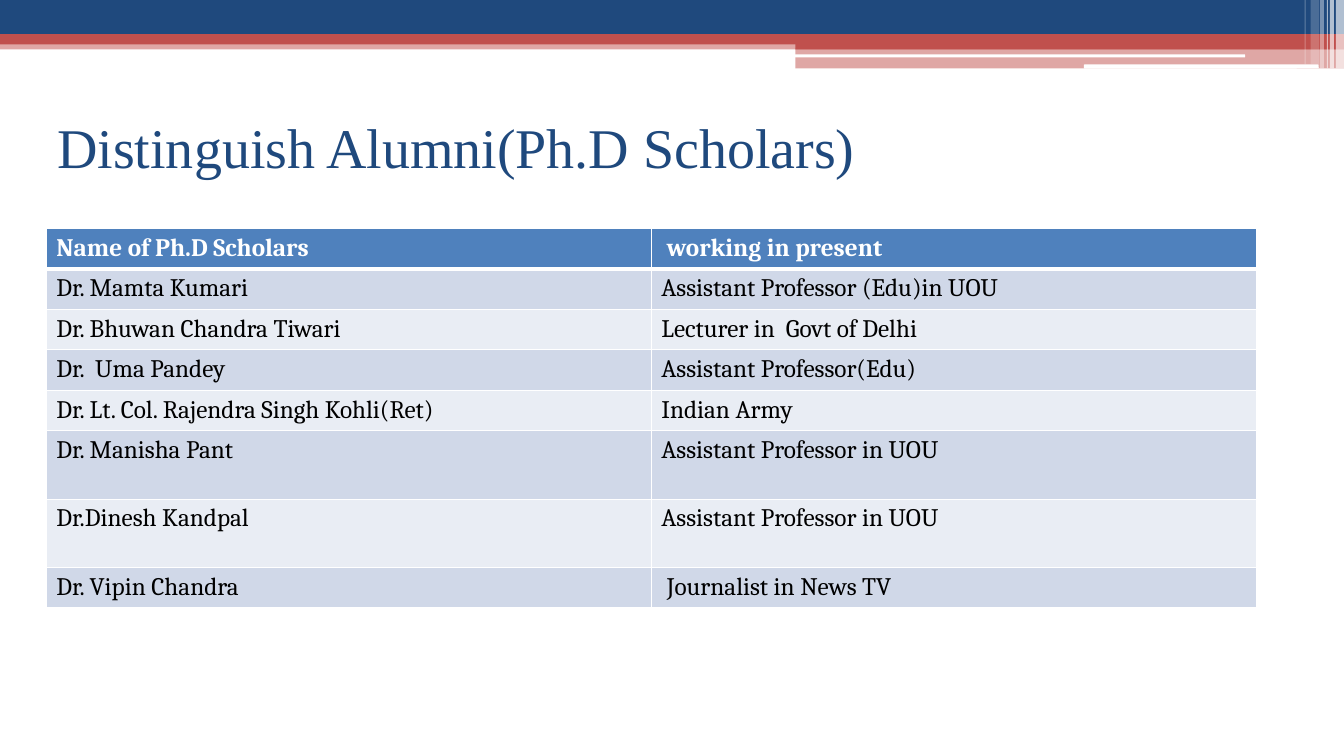
from lxml import etree
from pptx import Presentation
from pptx.dml.color import RGBColor
from pptx.enum.shapes import MSO_SHAPE
from pptx.enum.text import MSO_ANCHOR
from pptx.oxml.ns import qn
from pptx.util import Inches, Pt

RECT = MSO_SHAPE.RECTANGLE
ROUNDED = MSO_SHAPE.ROUNDED_RECTANGLE
MIDDLE = MSO_ANCHOR.MIDDLE

COLORS = {
    "navy": "1F497D",
    "red": "C0504D",
    "white": "FFFFFF",
    "black": "000000",
    "header": "4F81BD",
    "odd_row": "D0D8E8",
    "even_row": "E9EDF4",
}

# Left, top, width, height, colour, opacity in percent
BANDS = [
    (0, 0.4, 13.33, 0.09, "red", 50),
    (0, 0, 13.33, 0.34, "navy", 100),
    (0, 0.34, 13.33, 0.1, "red", 100),
    (7.89, 0.39, 5.44, 0.1, "red", 100),
    (7.89, 0.48, 5.44, 0.2, "red", 50),
]
GAPS = [(7.88, 0.54, 4.47, 0.03), (10.75, 0.64, 2.33, 0.04)]
# Left, width, height, opacity in percent
STRIPES = [
    (13.25, 0.08, 0.68, 65),
    (13.19, 0.04, 0.68, 65),
    (13.16, 0.01, 0.68, 60),
    (13.09, 0.04, 0.68, 40),
    (13, 0.08, 0.64, 20),
    (12.94, 0.01, 0.64, 30),
]

SCHOLARS = [
    ("Name of Ph.D Scholars", " working in present"),
    ("Dr. Mamta Kumari", "Assistant Professor (Edu)in UOU"),
    ("Dr. Bhuwan Chandra Tiwari", "Lecturer in  Govt of Delhi"),
    ("Dr.  Uma Pandey", "Assistant Professor(Edu)"),
    ("Dr. Lt. Col. Rajendra Singh Kohli(Ret)", "Indian Army"),
    ("Dr. Manisha Pant", "Assistant Professor in UOU"),
    ("Dr.Dinesh Kandpal", "Assistant Professor in UOU"),
    ("Dr. Vipin Chandra", " Journalist in News TV"),
]
ROW_HEIGHT = 0.4
TALL_ROWS = {5: 0.68, 6: 0.68}


def rgb(color):
    return RGBColor.from_string(COLORS[color])


def style_font(paragraph, name, size, color, bold=False):
    font = paragraph.font
    font.name, font.size, font.bold = name, Pt(size), bold
    font.color.rgb = rgb(color)


def add_bar(slide, left, top, width, height, color, opacity=100, kind=RECT):
    bar = slide.shapes.add_shape(
        kind, Inches(left), Inches(top), Inches(width), Inches(height))
    bar.shadow.inherit = False
    bar.fill.solid()
    bar.fill.fore_color.rgb = rgb(color)
    bar.line.fill.background()
    if opacity < 100:
        fill_color = bar._element.spPr.find(".//" + qn("a:srgbClr"))
        etree.SubElement(fill_color, qn("a:alpha"), val=str(opacity * 1000))


def add_title(slide, text):
    title = slide.shapes.add_textbox(
        Inches(0.47), Inches(0.86), Inches(12), Inches(1.17))
    frame = title.text_frame
    frame.word_wrap = True
    frame.vertical_anchor = MIDDLE
    frame.text = text
    style_font(frame.paragraphs[0], "Times New Roman", 40, "navy")


def set_borders(cell, **widths):
    properties = cell._tc.get_or_add_tcPr()
    for position, (side, width) in enumerate(widths.items()):
        border = etree.Element(qn("a:ln" + side), w=str(Pt(width)))
        fill = etree.SubElement(border, qn("a:solidFill"))
        etree.SubElement(fill, qn("a:srgbClr"), val=COLORS["white"])
        properties.insert(position, border)


def add_scholar_table(slide):
    heights = [TALL_ROWS.get(row, ROW_HEIGHT) for row in range(len(SCHOLARS))]
    table = slide.shapes.add_table(
        len(SCHOLARS), 2, Inches(0.46), Inches(2.27),
        Inches(12), Inches(sum(heights))).table
    for column in table.columns:
        column.width = Inches(6)
    for row, (height, entries) in enumerate(zip(heights, SCHOLARS)):
        table.rows[row].height = Inches(height)
        is_header = row == 0
        fill = "header" if is_header else "odd_row" if row % 2 else "even_row"
        for column, text in enumerate(entries):
            cell = table.cell(row, column)
            cell.text = text
            style_font(cell.text_frame.paragraphs[0], "Cambria", 18,
                       "white" if is_header else "black", is_header)
            cell.fill.solid()
            cell.fill.fore_color.rgb = rgb(fill)
            set_borders(cell, L=1, R=1, T=3 if row == 1 else 1,
                        B=3 if is_header else 1)


def main():
    deck = Presentation()
    deck.slide_width, deck.slide_height = Inches(13.33), Inches(7.5)
    slide = deck.slides.add_slide(deck.slide_layouts[6])

    # Header decoration
    for band in BANDS:
        add_bar(slide, *band)
    for gap in GAPS:
        add_bar(slide, *gap, "white", kind=ROUNDED)
    for left, width, height, opacity in STRIPES:
        add_bar(slide, left, 0, width, height, "white", opacity)

    # Content
    add_title(slide, "Distinguish Alumni(Ph.D Scholars)")
    add_scholar_table(slide)

    deck.save("out.pptx")


if __name__ == "__main__":
    main()
